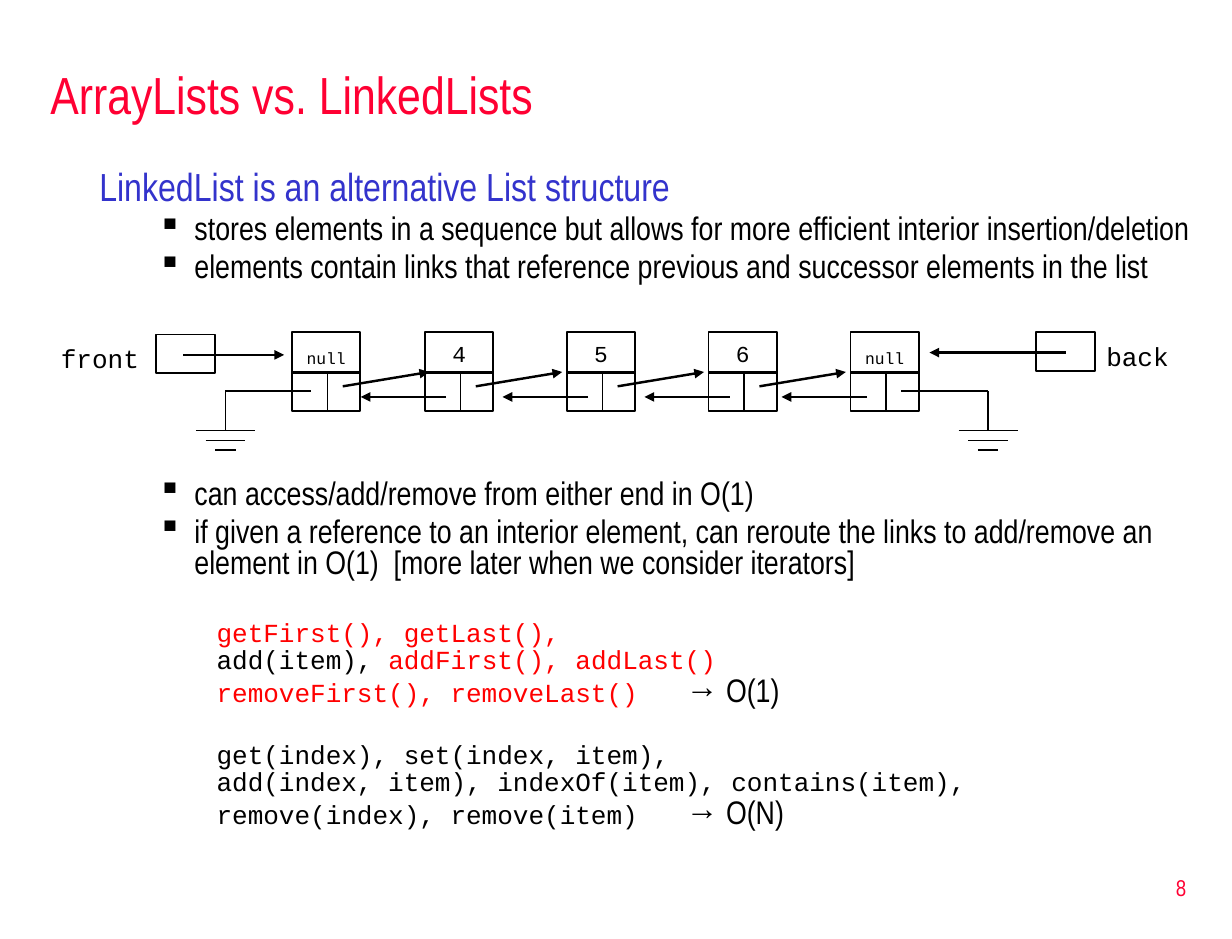
from pptx import Presentation
from pptx.dml.color import RGBColor
from pptx.enum.shapes import MSO_CONNECTOR as LINE, MSO_SHAPE as SHAPE
from pptx.enum.text import MSO_ANCHOR as ANCHOR, PP_ALIGN as ALIGN
from pptx.oxml.ns import qn
from pptx.util import Cm, Pt
from lxml.etree import SubElement

BLACK, RED, CRIMSON, BLUE = "000000", "FF0000", "FF0033", "3333CC"
SANS, MONO = "Arial Narrow", "Courier New"


def rgb(value):
    """Return the colour of a hex string."""
    return RGBColor.from_string(value)


def add_run(p, text, size, name=SANS, color=BLACK):
    """Append a formatted run to a paragraph."""
    r = p.add_run()
    r.text = text
    for key, value in {"size": Pt(size), "name": name, "bold": False}.items():
        setattr(r.font, key, value)
    r.font.color.rgb = rgb(color)


def format_frame(tf, anchor):
    """Set the margins, wrapping and anchor of a text frame."""
    values = {"margin_left": Cm(0.25), "margin_right": Cm(0.25),
              "margin_top": Cm(0.13), "margin_bottom": Cm(0.13),
              "word_wrap": True, "vertical_anchor": anchor}
    for key, value in values.items():
        setattr(tf, key, value)


def add_label(s, x, y, w, h, text, size, name=SANS, color=BLACK,
              align=ALIGN.LEFT, anchor=ANCHOR.MIDDLE):
    """Add a text box with one line."""
    tf = s.shapes.add_textbox(Cm(x), Cm(y), Cm(w), Cm(h)).text_frame
    format_frame(tf, anchor)
    tf.paragraphs[0].alignment = align
    add_run(tf.paragraphs[0], text, size, name, color)


def add_cell(s, x, y, w, h, text="", size=14):
    """Add an outlined memory cell with an optional value."""
    sp = s.shapes.add_shape(SHAPE.RECTANGLE, Cm(x), Cm(y), Cm(w), Cm(h))
    sp.shadow.inherit = False
    sp.fill.background()
    sp.line.color.rgb = rgb(BLACK)
    sp.line.width = Pt(1)
    if text:
        format_frame(sp.text_frame, ANCHOR.BOTTOM)
        p = sp.text_frame.paragraphs[0]
        p.alignment = ALIGN.CENTER
        add_run(p, text, size, MONO)


def add_line(s, x1, y1, x2, y2, arrow=False):
    """Add a straight line, thicker and with a head if it is an arrow."""
    c = s.shapes.add_connector(LINE.STRAIGHT, Cm(x1), Cm(y1), Cm(x2), Cm(y2))
    c.line.color.rgb = rgb(BLACK)
    c.line.width = Pt(1.5 if arrow else 1)
    if arrow:
        SubElement(c.line._get_or_add_ln(), qn("a:tailEnd"), type="triangle")
    SubElement(c._element.spPr, qn("a:effectLst"))


def add_ground(s, x, y, wire_x):
    """Draw a null link: a wire from a cell to a ground sign."""
    add_line(s, wire_x, y, x, y)
    add_line(s, x, y, x, y + 0.86)
    for i in range(3):
        half, bar_y = 0.64 - 0.21 * i, y + 0.86 + 0.21 * i
        add_line(s, x - half, bar_y, x + half, bar_y)


def add_node(s, x, y, value, has_prev, has_next):
    """Draw a list node with its links to the neighbours."""
    add_cell(s, x, y, 1.48, 0.89, value, 10 if value == "null" else 14)
    add_cell(s, x, y + 0.86, 1.48, 0.84)
    add_line(s, x + 0.77, y + 0.86, x + 0.77, y + 1.7)
    if has_next:
        add_line(s, x + 1.1, y + 1.17, x + 2.97, y + 0.86, True)
    if has_prev:
        start = x + (0.46 if has_next else 0.36)
        add_line(s, start, y + 1.4, start - 1.85, y + 1.4, True)


def add_diagram(s, x, y):
    """Draw the doubly linked list with its end references."""
    values = ["null", "4", "5", "6", "null"]
    last = len(values) - 1
    for i, value in enumerate(values):
        left = 8.13 + 3.07 * (i - 1) if i else 5.25
        add_node(s, x + left, y, value, i > 0, i < last)
    add_ground(s, x + 3.81, y + 1.27, x + 5.66)
    add_ground(s, x + 20.32, y + 1.27, x + 18.44)
    ends = [("front", 0, 0.05, 2.31, 2.9, 5.08),
            ("back", 22.63, 0, 21.36, 22, 19.05)]
    for text, label_x, dy, cell_x, start, end in ends:
        add_label(s, x + label_x, y + dy + 0.05, 2.34, 0.94, text, 16, MONO)
        add_cell(s, x + cell_x, y + dy, 1.27, 0.84)
        add_line(s, x + start, y + dy + 0.44, x + end, y + dy + 0.44, True)


def add_paragraph(tf, runs, before, spacing, margin, indent):
    """Append a paragraph and return its properties element."""
    p = tf.paragraphs[0] if not tf.paragraphs[0].runs else tf.add_paragraph()
    p.space_before, p.line_spacing = Pt(before), spacing
    for run in runs:
        add_run(p, *run)
    pPr = p._p.get_or_add_pPr()
    pPr.set("marL", str(Cm(margin)))
    pPr.set("indent", str(Cm(indent)))
    return pPr


def add_body(s, x, y, w, h):
    """Write the heading, the bullets and the two groups of methods."""
    tf = s.shapes.add_textbox(Cm(x), Cm(y), Cm(w), Cm(h)).text_frame
    format_frame(tf, ANCHOR.TOP)
    heading = "LinkedList is an alternative List structure"
    add_paragraph(tf, [(heading, 24, SANS, BLUE)], 4.8, 1.0, 0, 0)
    bullets = [
        ("stores elements in a sequence but allows for more efficient interior insertion/deletion", 4),
        ("elements contain links that reference previous and successor elements in the list", 4),
        ("can access/add/remove from either end in O(1)", 120),
        ("if given a reference to an interior element, can reroute the links to add/remove an "
         "element in O(1)  [more later when we consider iterators]", 4),
    ]
    for text, before in bullets:
        pPr = add_paragraph(tf, [(text, 20)], before, 0.8, 2.06, -0.79)
        SubElement(pPr, qn("a:buChar"), char="▪")
    methods = [
        ([("getFirst(), getLast(),", RED)], "", 27),
        ([("add(item), ", BLACK), ("addFirst(), addLast()", RED)], "", 3.2),
        ([("removeFirst(), removeLast()", RED)], "→ O(1)", 4),
        ([("get(index), set(index, item),", BLACK)], "", 24),
        ([("add(index, item), indexOf(item), contains(item),", BLACK)], "", 3.2),
        ([("remove(index), remove(item)", BLACK)], "→ O(N)", 4),
    ]
    for parts, cost, before in methods:
        runs = [(text, 16, MONO, color) for text, color in parts]
        if cost:
            runs.append(("\t" + cost, 20))
        pPr = add_paragraph(tf, runs, before, 0.7, 0, 2.54)
        if cost:
            tabs = SubElement(pPr, qn("a:tabLst"))
            SubElement(tabs, qn("a:tab"), pos=str(Cm(20.96)), algn="l")


def add_title(s, x, y, w, h, text):
    """Move the title placeholder and write the title."""
    sp = s.shapes.title
    box = {"left": x, "top": y, "width": w, "height": h}
    for key, value in box.items():
        setattr(sp, key, Cm(value))
    format_frame(sp.text_frame, ANCHOR.MIDDLE)
    p = sp.text_frame.paragraphs[0]
    p.alignment = ALIGN.LEFT
    add_run(p, text, 32, SANS, CRIMSON)


def main():
    """Build the slide and save it."""
    prs = Presentation()
    prs.slide_width, prs.slide_height = Cm(26.67), Cm(20.32)
    s = prs.slides.add_slide(prs.slide_layouts[5])
    add_title(s, 0.84, 1.07, 25.2, 1.9, "ArrayLists vs. LinkedLists")
    add_body(s, 1.9, 3.38, 24.2, 15.67)
    add_diagram(s, 1.07, 7.19)
    add_label(s, 20.37, 18.52, 5.56, 1.35, "8", 14, color=CRIMSON, align=ALIGN.RIGHT)
    prs.save("out.pptx")


if __name__ == "__main__":
    main()
